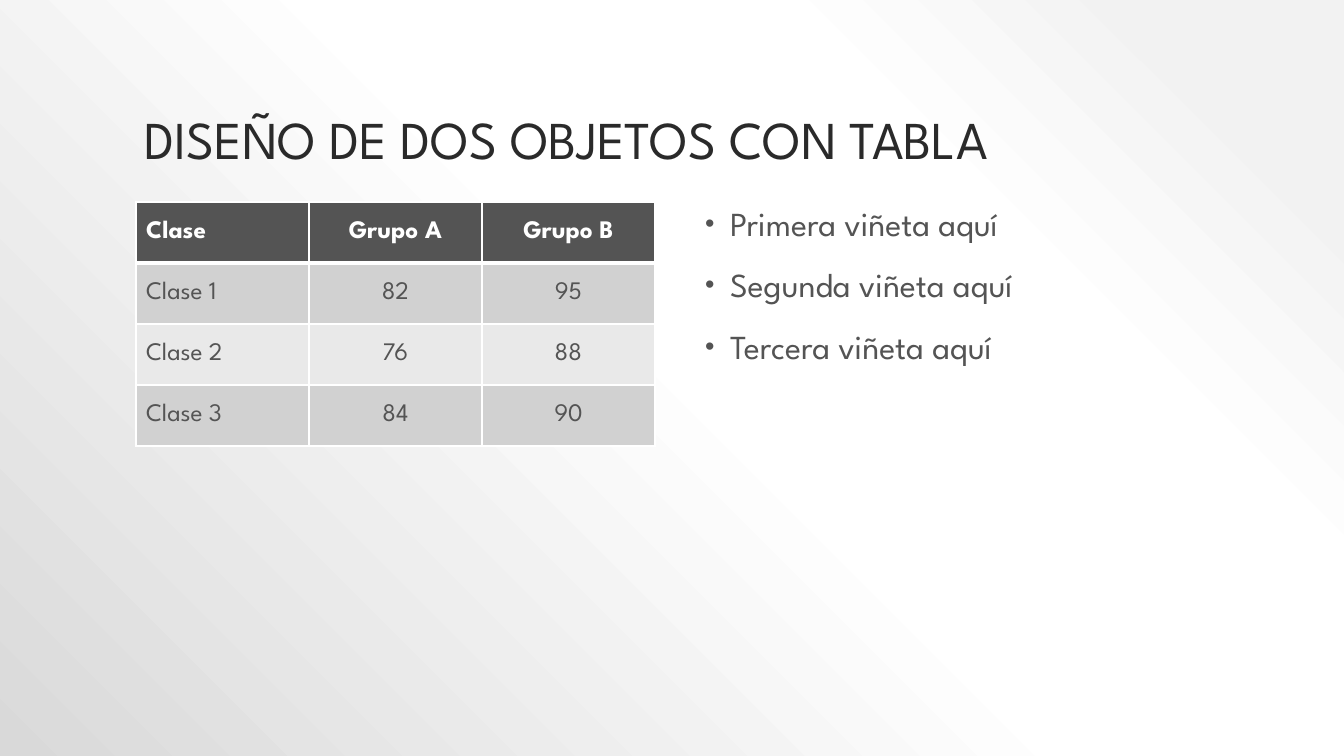
from lxml import etree
from pptx import Presentation
from pptx.dml.color import RGBColor
from pptx.enum.text import MSO_ANCHOR as ANCHOR, MSO_AUTO_SIZE as FIT, PP_ALIGN as ALIGN
from pptx.oxml import parse_xml
from pptx.oxml.ns import nsdecls, qn
from pptx.util import Pt

# Content
TITLE = "DISEÑO DE DOS OBJETOS CON TABLA"
ROWS = [
    ("Clase", "Grupo A", "Grupo B"),
    ("Clase 1", "82", "95"),
    ("Clase 2", "76", "88"),
    ("Clase 3", "84", "90"),
]
BULLETS = ["Primera viñeta aquí", "Segunda viñeta aquí", "Tercera viñeta aquí"]

# Style
FONT = "League Spartan"
INK, GRAY, WHITE = "2A2A2A", "545454", "FFFFFF"
BANDS = ["D1D1D1", "E9E9E9"]
STOPS = [(10, "F2F2F2"), (28, WHITE), (48, WHITE), (100, "D9D9D9")]

# Layout in px
SLIDE_W, SLIDE_H = 1344, 756
TITLE_BOX = (134, 30, 1076, 146)
BODY_BOX = (690, 202, 519, 479)
TABLE_X, TABLE_Y, COL_W, ROW_H = 136, 202, 173, 61


def px(n):
    return round(n * 914400 / 100.8)


def rgb(value):
    return RGBColor.from_string(value)


def write(p, text, size, color, bold=False, align=ALIGN.LEFT, spacing=1.0, before=0):
    p.alignment, p.line_spacing, p.space_before = align, spacing, Pt(before)
    r = p.add_run()
    r.text = text
    r.font.name, r.font.size, r.font.bold = FONT, Pt(size), bold
    r.font.color.rgb = rgb(color)


def place(sp, box, anchor):
    sp.left, sp.top, sp.width, sp.height = map(px, box)
    tf = sp.text_frame
    tf.word_wrap, tf.auto_size, tf.vertical_anchor = True, FIT.NONE, anchor
    return tf


def add_bullet(p):
    pPr = p._p.get_or_add_pPr()
    pPr.set("marL", str(px(30)))
    pPr.set("indent", str(-px(25)))
    color = etree.SubElement(pPr, qn("a:buClr"))
    etree.SubElement(color, qn("a:srgbClr"), val=GRAY)
    etree.SubElement(pPr, qn("a:buSzPct"), val="80000")
    etree.SubElement(pPr, qn("a:buFont"), typeface="Arial")
    etree.SubElement(pPr, qn("a:buChar"), char="•")


def set_borders(cell, bottom):
    tcPr = cell._tc.get_or_add_tcPr()
    for i, (side, width) in enumerate([("L", 1), ("R", 1), ("T", 1), ("B", bottom)]):
        tcPr.insert(i, parse_xml(
            f'<a:ln{side} {nsdecls("a")} w="{Pt(width)}"><a:solidFill>'
            f'<a:srgbClr val="{WHITE}"/></a:solidFill></a:ln{side}>'))


prs = Presentation()
prs.slide_width, prs.slide_height = px(SLIDE_W), px(SLIDE_H)
slide = prs.slides.add_slide(prs.slide_layouts[1])

# Background: circular gradient from the top right corner
slide.background.fill.solid()
solid = slide.background._cSld.find(".//" + qn("a:solidFill"))
stops = "".join(f'<a:gs pos="{pos * 1000}"><a:srgbClr val="{color}"/></a:gs>'
                for pos, color in STOPS)
solid.getparent().replace(solid, parse_xml(
    f'<a:gradFill {nsdecls("a")} rotWithShape="1"><a:gsLst>{stops}</a:gsLst>'
    '<a:path path="circle"><a:fillToRect l="100000" b="100000"/></a:path></a:gradFill>'))

# Title
tf = place(slide.shapes.title, TITLE_BOX, ANCHOR.BOTTOM)
write(tf.paragraphs[0], TITLE, 38, INK, spacing=0.9)

# Table
n_rows, n_cols = len(ROWS), len(ROWS[0])
table = slide.shapes.add_table(n_rows, n_cols, px(TABLE_X), px(TABLE_Y),
                               px(COL_W * n_cols), px(ROW_H * n_rows)).table
for i, row in enumerate(ROWS):
    header = i == 0
    table.rows[i].height = px(ROW_H)
    for j, text in enumerate(row):
        cell = table.cell(i, j)
        cell.vertical_anchor = ANCHOR.MIDDLE
        cell.fill.solid()
        cell.fill.fore_color.rgb = rgb(GRAY if header else BANDS[(i - 1) % 2])
        set_borders(cell, bottom=3 if header else 1)
        if i == 1:
            cell._tc.tcPr.find(qn("a:lnT")).set("w", str(Pt(3)))
        write(cell.text_frame.paragraphs[0], text, 18, WHITE if header else GRAY,
              bold=header, align=ALIGN.CENTER if j else ALIGN.LEFT)

# Bullet list
tf = place(slide.placeholders[1], BODY_BOX, ANCHOR.TOP)
for i, text in enumerate(BULLETS):
    p = tf.add_paragraph() if i else tf.paragraphs[0]
    write(p, text, 24, GRAY, spacing=0.9, before=18)
    add_bullet(p)

prs.save("out.pptx")
